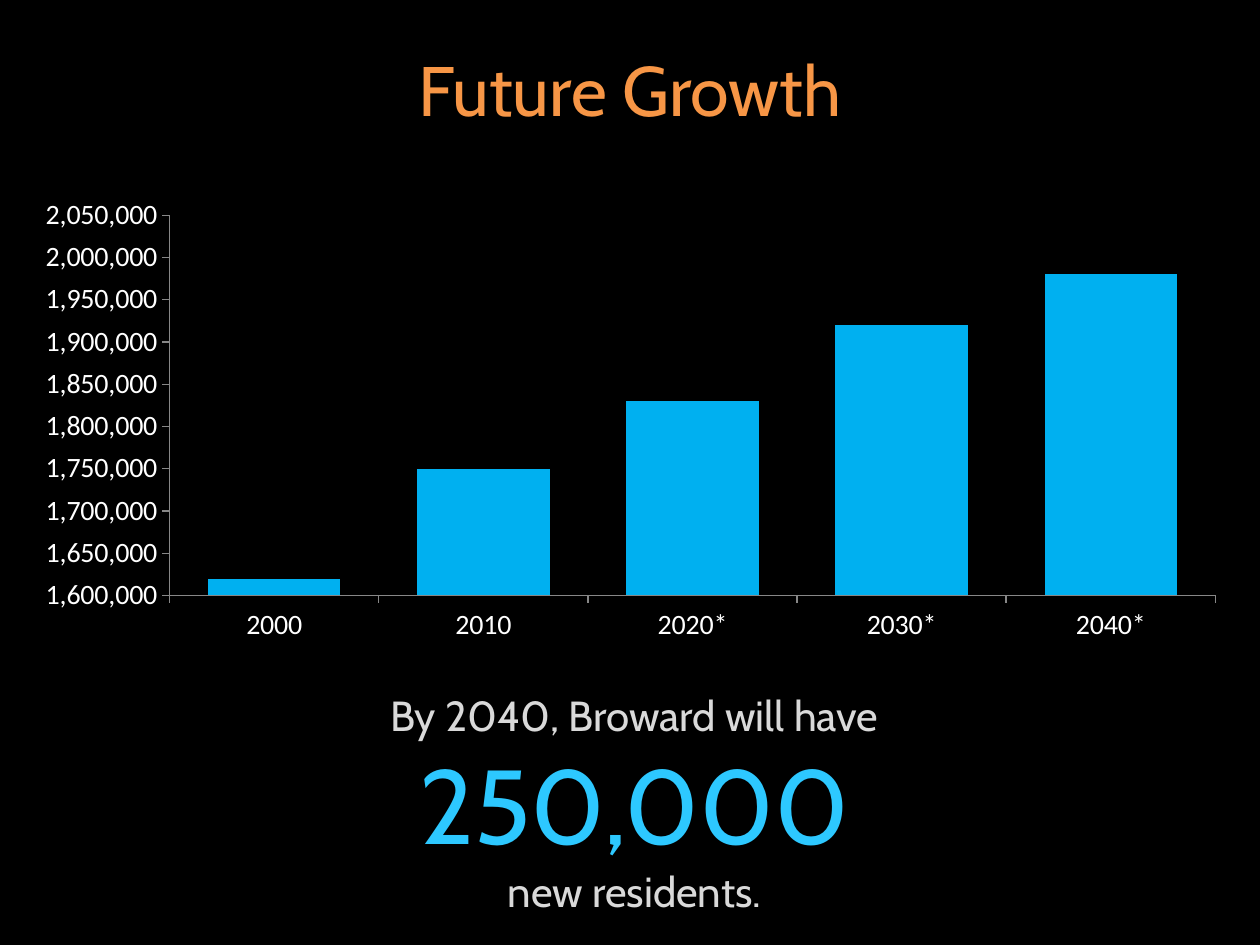
from pptx import Presentation
from pptx.chart.data import CategoryChartData
from pptx.dml.color import RGBColor
from pptx.enum import chart as ch, text as tx
from pptx.util import Cm, Pt

POPULATION = {
    "2000": 1620000,
    "2010": 1750000,
    "2020*": 1830000,
    "2030*": 1920000,
    "2040*": 1980000,
}


def paint(fill, colour):
    fill.solid()
    fill.fore_color.rgb = RGBColor.from_string(colour)


def format_font(font, name, size, colour):
    font.name = name
    font.size = Pt(size)
    font.color.rgb = RGBColor.from_string(colour)


def add_line(frame, words, *, size, colour, font, first=False):
    """Write one centred paragraph, reusing the frame's own one if first."""
    line = frame.paragraphs[0] if first else frame.add_paragraph()
    line.alignment = tx.PP_ALIGN.CENTER
    run = line.add_run()
    run.text = words
    format_font(run.font, font, size, colour)


class GrowthSlide:
    heading_font = "Cabin"
    axis_font = "Calibri"
    background = "000000"
    axis_text = "FFFFFF"
    axis_line = "878787"
    bar = "00B0F0"
    title = "F79646"
    body = "D9D9D9"
    highlight = "2DC8FF"

    def __init__(self, deck):
        self.slide = deck.slides.add_slide(deck.slide_layouts[6])
        paint(self.slide.background.fill, self.background)

    def text(self, place, lines, anchor=tx.MSO_ANCHOR.TOP):
        """Add a text box; lines holds (words, size, colour) for each paragraph."""
        frame = self.slide.shapes.add_textbox(*map(Cm, place)).text_frame
        frame.word_wrap = True
        frame.vertical_anchor = anchor
        for index, (words, size, colour) in enumerate(lines):
            add_line(frame, words, size=size, colour=colour,
                     font=self.heading_font, first=index == 0)

    def columns(self, place, values, low, high, step):
        figures = CategoryChartData(number_format="#,##0")
        figures.categories = list(values)
        figures.add_series("Series 1", list(values.values()))
        chart = self.slide.shapes.add_chart(
            ch.XL_CHART_TYPE.COLUMN_CLUSTERED, *map(Cm, place), figures).chart
        chart.has_legend = False
        chart.has_title = False
        format_font(chart.font, self.heading_font, 10, self.axis_text)

        plot = chart.plots[0]
        plot.gap_width = 58
        plot.vary_by_categories = False
        paint(plot.series[0].format.fill, self.bar)

        for axis in (chart.category_axis, chart.value_axis):
            axis.has_major_gridlines = False
            axis.major_tick_mark = ch.XL_TICK_MARK.OUTSIDE
            axis.minor_tick_mark = ch.XL_TICK_MARK.NONE
            format_font(axis.tick_labels.font, self.axis_font, 16, self.axis_text)
            paint(axis.format.line.fill, self.axis_line)
            axis.format.line.width = Pt(0.75)

        scale = chart.value_axis
        scale.minimum_scale, scale.maximum_scale = low, high
        scale.major_unit = step
        scale.tick_labels.number_format = "#,##0"
        scale.tick_labels.number_format_is_linked = False


def main():
    deck = Presentation()
    deck.slide_width, deck.slide_height = Cm(25.4), Cm(19.05)
    growth = GrowthSlide(deck)
    growth.columns((0.43, 3.81, 24.56, 9.32), POPULATION,
                   low=1600000, high=2050000, step=50000)
    growth.text((3.15, 13.77, 19.28, 4.88), [
        ("By 2040, Broward will have", 24, growth.body),
        ("250,000", 60, growth.highlight),
        ("new residents.", 24, growth.body),
    ])
    growth.text((0, -0.43, 25.4, 3.18), [("Future Growth", 40, growth.title)],
                anchor=tx.MSO_ANCHOR.BOTTOM)
    deck.save("out.pptx")


if __name__ == "__main__":
    main()
